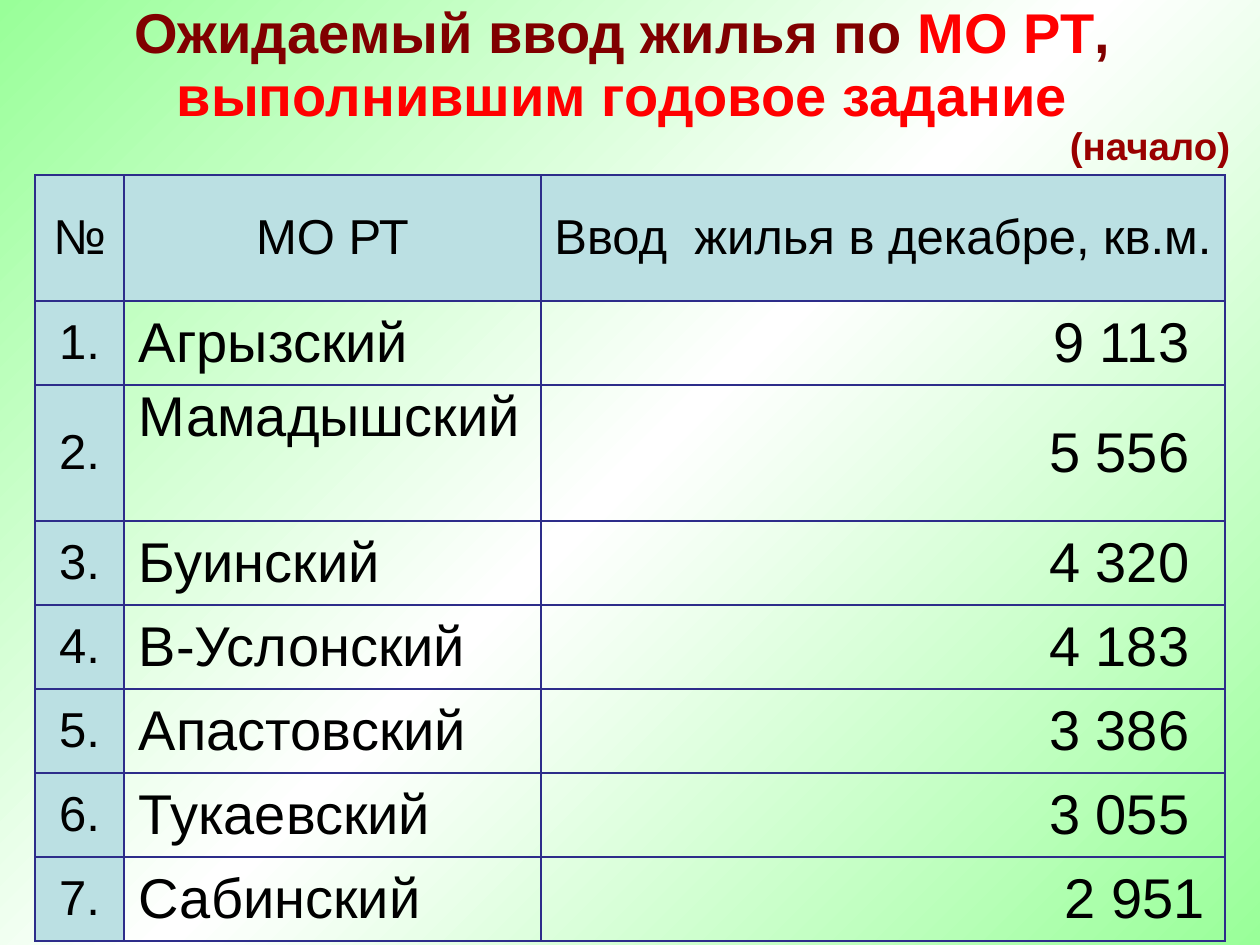
from dataclasses import dataclass

from lxml.etree import SubElement
from pptx import Presentation
from pptx.dml.color import RGBColor
from pptx.enum.text import MSO_ANCHOR, PP_ALIGN
from pptx.oxml.ns import qn
from pptx.util import Emu, Pt

# Content
TITLE = [
    [("Ожидаемый ввод жилья по ", "maroon"), ("МО РТ", "red"), (", ", "maroon")],
    [("выполнившим годовое задание ", "red")],
]
PART_NOTE = "(начало)"
HEADER = ["№", "МО РТ", "Ввод  жилья в декабре, кв.м."]
DISTRICTS = [
    ("Агрызский", "9 113 "),
    ("Мамадышский", "5 556 "),
    ("Буинский", "4 320 "),
    ("В-Услонский", "4 183 "),
    ("Апастовский", "3 386 "),
    ("Тукаевский", "3 055 "),
    ("Сабинский", "2 951"),
]
TALL_DISTRICT = "Мамадышский"


@dataclass(frozen=True)
class Theme:
    font: str = "Arial"
    large: int = 32
    medium: int = 28
    small: int = 22
    maroon: str = "800000"
    red: str = "FF0000"
    note: str = "990000"
    black: str = "000000"
    header: str = "BBE0E3"
    border: str = "2D2D8A"
    gradient: tuple = ((0, "99FF99"), (50, "FFFFFF"), (100, "99FF99"))


THEME = Theme()

# Layout in px
SCALE = 914400 // 126
SLIDE = (1260, 945)
TITLE_BOX = (0, 0, 1260, 126)
NOTE_BOX = (1057, 116, 189, 59)
TABLE_LEFT, TABLE_TOP = 35, 175
COLUMNS = [89, 417, 684]
HEADER_HEIGHT, ROW_HEIGHT, TALL_HEIGHT = 126, 84, 136


def px(length):
    return Emu(length * SCALE)


def write(para, text, size=THEME.medium, color=THEME.black, bold=False, align=PP_ALIGN.LEFT):
    para.alignment = align
    span = para.add_run()
    span.text = text
    span.font.name = THEME.font
    span.font.size = Pt(size)
    span.font.bold = bold
    span.font.color.rgb = RGBColor.from_string(color)


def add_box(page, place, margins):
    frame = page.shapes.add_textbox(*map(px, place)).text_frame
    frame.word_wrap = True
    set_margins(frame, margins)
    return frame


def set_margins(holder, margins):
    holder.margin_left, holder.margin_top, holder.margin_right, holder.margin_bottom = map(px, margins)


def paint_background(page):
    fill = page.background.fill
    fill.gradient()
    fill.gradient_angle = 315
    stops = page.element.find(".//" + qn("a:gsLst"))
    for stop in list(stops):
        stops.remove(stop)
    for position, color in THEME.gradient:
        stop = SubElement(stops, qn("a:gs"), pos=str(position * 1000))
        SubElement(stop, qn("a:srgbClr"), val=color)


def add_borders(cell):
    properties = cell._tc.get_or_add_tcPr()
    for index, side in enumerate(("lnL", "lnR", "lnT", "lnB")):
        line = properties.makeelement(qn("a:" + side), {"w": str(Pt(1))})
        properties.insert(index, line)
        solid = SubElement(line, qn("a:solidFill"))
        SubElement(solid, qn("a:srgbClr"), val=THEME.border)


def fill_cell(cell, text, margins, fill=None, anchor=MSO_ANCHOR.MIDDLE, **style):
    set_margins(cell, margins)
    cell.vertical_anchor = anchor
    if fill:
        cell.fill.solid()
        cell.fill.fore_color.rgb = RGBColor.from_string(fill)
    else:
        cell.fill.background()
    add_borders(cell)
    write(cell.text_frame.paragraphs[0], text, **style)


def add_district_table(page):
    heights = [HEADER_HEIGHT] + [
        TALL_HEIGHT if name == TALL_DISTRICT else ROW_HEIGHT for name, _ in DISTRICTS
    ]
    place = (TABLE_LEFT, TABLE_TOP, sum(COLUMNS), sum(heights))
    table = page.shapes.add_table(len(heights), len(COLUMNS), *map(px, place)).table
    table.first_row = table.horz_banding = False
    for column, width in zip(table.columns, COLUMNS):
        column.width = px(width)
    for row, height in zip(table.rows, heights):
        row.height = px(height)

    for index, label in enumerate(HEADER):
        fill_cell(table.cell(0, index), label, (5, 0, 5, 0), THEME.header, align=PP_ALIGN.CENTER)
    for number, (name, area) in enumerate(DISTRICTS, 1):
        anchor = MSO_ANCHOR.TOP if name == TALL_DISTRICT else MSO_ANCHOR.MIDDLE
        fill_cell(table.cell(number, 0), f"{number}.", (0, 0, 0, 0), THEME.header,
                  align=PP_ALIGN.CENTER)
        fill_cell(table.cell(number, 1), name, (15, 1, 10, 0), anchor=anchor, size=THEME.large)
        fill_cell(table.cell(number, 2), area, (15, 1, 20, 0), size=THEME.large,
                  align=PP_ALIGN.RIGHT)


def main():
    deck = Presentation()
    deck.slide_width, deck.slide_height = map(px, SLIDE)
    page = deck.slides.add_slide(deck.slide_layouts[6])
    paint_background(page)

    # Title
    title = add_box(page, TITLE_BOX, (13, 4, 13, 0))
    for index, spans in enumerate(TITLE):
        para = title.add_paragraph() if index else title.paragraphs[0]
        para.line_spacing = 0.93
        for text, color in spans:
            write(para, text, size=THEME.large, color=getattr(THEME, color), bold=True,
                  align=PP_ALIGN.CENTER)

    add_district_table(page)

    # Part note
    note = add_box(page, NOTE_BOX, (13, 6, 13, 6))
    note.word_wrap = False
    write(note.paragraphs[0], PART_NOTE, size=THEME.small, color=THEME.note, bold=True)

    deck.save("out.pptx")


if __name__ == "__main__":
    main()
